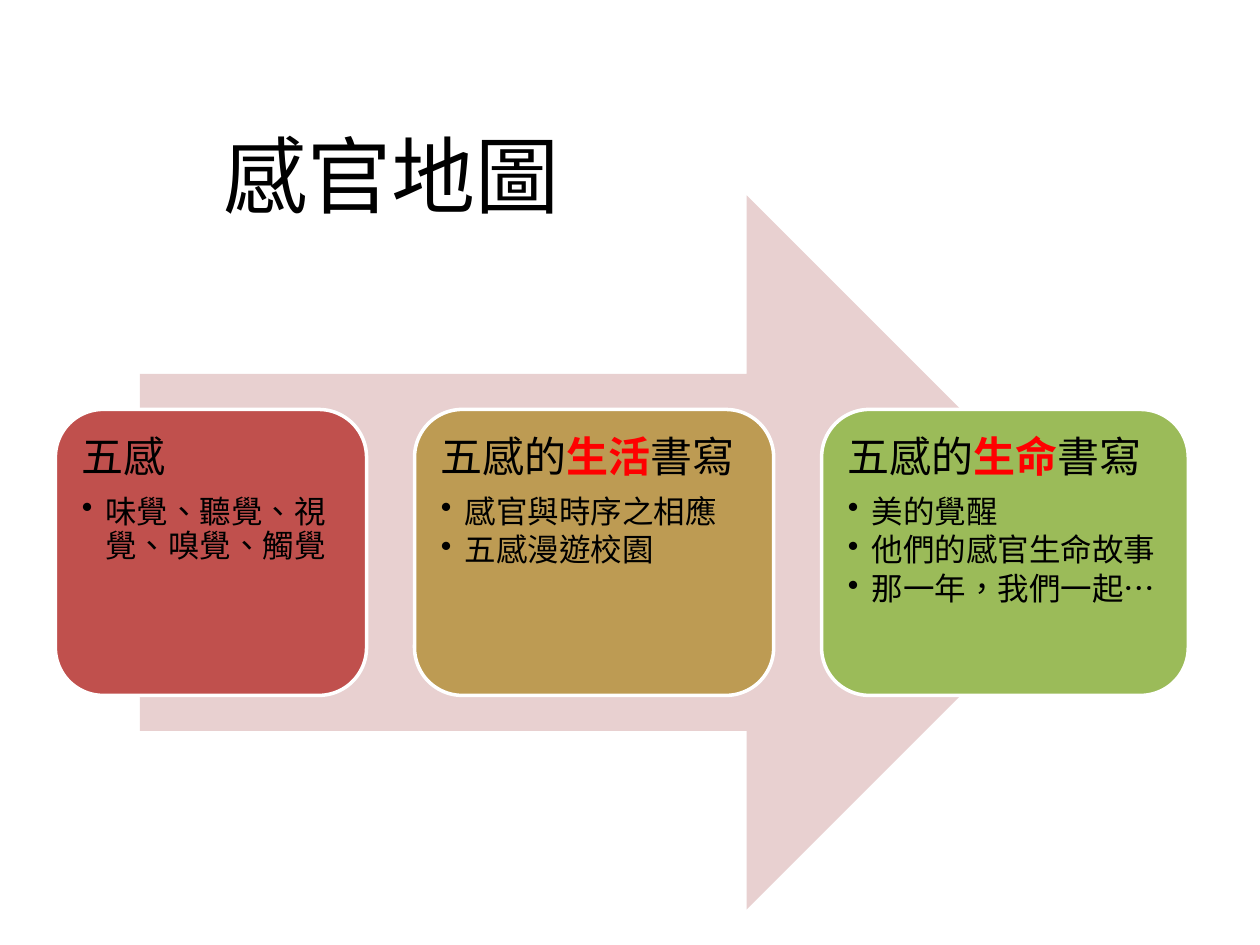
from dataclasses import dataclass

from lxml.etree import SubElement
from pptx import Presentation
from pptx.dml.color import RGBColor
from pptx.enum.lang import MSO_LANGUAGE_ID
from pptx.enum.shapes import MSO_SHAPE
from pptx.enum.text import MSO_ANCHOR, PP_ALIGN
from pptx.oxml.ns import qn
from pptx.util import Pt

COLORS = {
    "text": "000000",
    "highlight": "FF0000",
    "outline": "FFFFFF",
    "arrow": "E8D0D0",
    "red": "C0504D",
    "ochre": "BD9B53",
    "green": "9BBB59",
}
CJK_FONT = "Noto Sans CJK SC"
CARD_LEFT, CARD_TOP, CARD_HEIGHT, CARD_GAP = 31.7, 234, 163.4, 27.4
INSET = 7.2
BULLET_INDENT = 13.5


@dataclass(frozen=True)
class Span:
    text: str
    highlighted: bool = False


@dataclass(frozen=True)
class Card:
    width: float
    color: str
    heading: tuple[Span, ...]
    bullets: tuple[str, ...]


CARDS = (
    Card(177.8, "red", (Span("五感"),), ("味覺、聽覺、視覺、嗅覺、觸覺",)),
    Card(205.2, "ochre", (Span("五感的"), Span("生活", True), Span("書寫")),
         ("感官與時序之相應", "五感漫遊校園")),
    Card(209.5, "green", (Span("五感的"), Span("生命", True), Span("書寫")),
         ("美的覺醒", "他們的感官生命故事", "那一年，我們一起…")),
)


def rgb(name: str) -> RGBColor:
    return RGBColor.from_string(COLORS[name])


def set_attributes(target, values: dict) -> None:
    for name, value in values.items():
        setattr(target, name, value)


def add_span(para, span: Span, size: float, latin: str = CJK_FONT) -> None:
    run = para.add_run()
    run.text = span.text
    set_attributes(run.font, {
        "size": Pt(size),
        "bold": span.highlighted,
        "name": latin,
        "language_id": MSO_LANGUAGE_ID.TRADITIONAL_CHINESE,
    })
    run.font.color.rgb = rgb("highlight" if span.highlighted else "text")
    SubElement(run.font._element, qn("a:ea"), typeface=CJK_FONT)


def add_bullet(para) -> None:
    properties = para._p.get_or_add_pPr()
    properties.set("marL", str(Pt(BULLET_INDENT)))
    properties.set("indent", str(-Pt(BULLET_INDENT)))
    SubElement(properties, qn("a:buChar"), char="•")


def add_filled_shape(slide, kind, left: float, top: float, width: float,
                     height: float, color: str):
    shape = slide.shapes.add_shape(kind, Pt(left), Pt(top), Pt(width), Pt(height))
    shape.shadow.inherit = False
    shape.fill.solid()
    shape.fill.fore_color.rgb = rgb(color)
    shape.line.fill.background()
    return shape


def add_card(slide, card: Card, left: float) -> None:
    box = add_filled_shape(slide, MSO_SHAPE.ROUNDED_RECTANGLE, left, CARD_TOP,
                           card.width, CARD_HEIGHT, card.color)
    box.line.color.rgb = rgb("outline")
    box.line.width = Pt(2)
    frame = box.text_frame
    set_attributes(frame, {
        "word_wrap": True,
        "vertical_anchor": MSO_ANCHOR.TOP,
        "margin_left": Pt(INSET),
        "margin_top": Pt(INSET),
        "margin_right": Pt(INSET),
        "margin_bottom": Pt(INSET),
    })
    spacing = {"alignment": PP_ALIGN.LEFT, "line_spacing": 0.9}
    para = frame.paragraphs[0]
    set_attributes(para, spacing | {"space_after": Pt(8.4)})
    for span in card.heading:
        add_span(para, span, 24)
    for text in card.bullets:
        para = frame.add_paragraph()
        set_attributes(para, spacing | {"level": 1, "space_after": Pt(2.7)})
        add_bullet(para)
        add_span(para, Span(text), 18, "Calibri")


def add_title(slide, text: str) -> None:
    title = slide.shapes.title
    set_attributes(title, {"left": Pt(19.4), "top": Pt(43.2),
                           "width": Pt(409), "height": Pt(112.3)})
    title.text_frame.vertical_anchor = MSO_ANCHOR.MIDDLE
    para = title.text_frame.paragraphs[0]
    para.alignment = PP_ALIGN.CENTER
    add_span(para, Span(text), 48)


def main() -> None:
    deck = Presentation()
    deck.slide_width, deck.slide_height = Pt(720), Pt(540)
    slide = deck.slides.add_slide(deck.slide_layouts[5])
    add_title(slide, "感官地圖")
    add_filled_shape(slide, MSO_SHAPE.RIGHT_ARROW, 79.9, 111.6, 550.8, 408.2, "arrow")
    left = CARD_LEFT
    for card in CARDS:
        add_card(slide, card, left)
        left += card.width + CARD_GAP
    deck.save("out.pptx")


if __name__ == "__main__":
    main()
